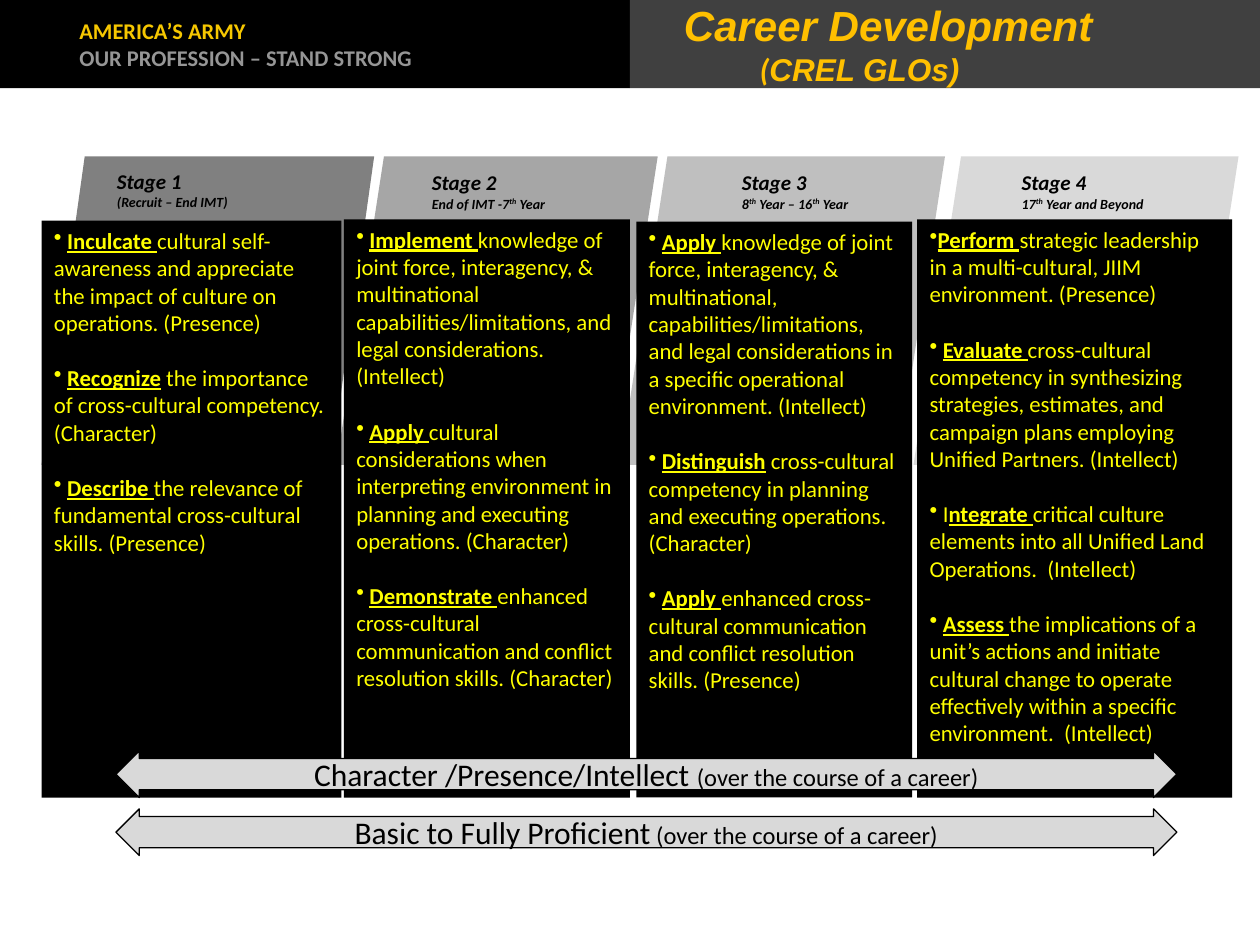
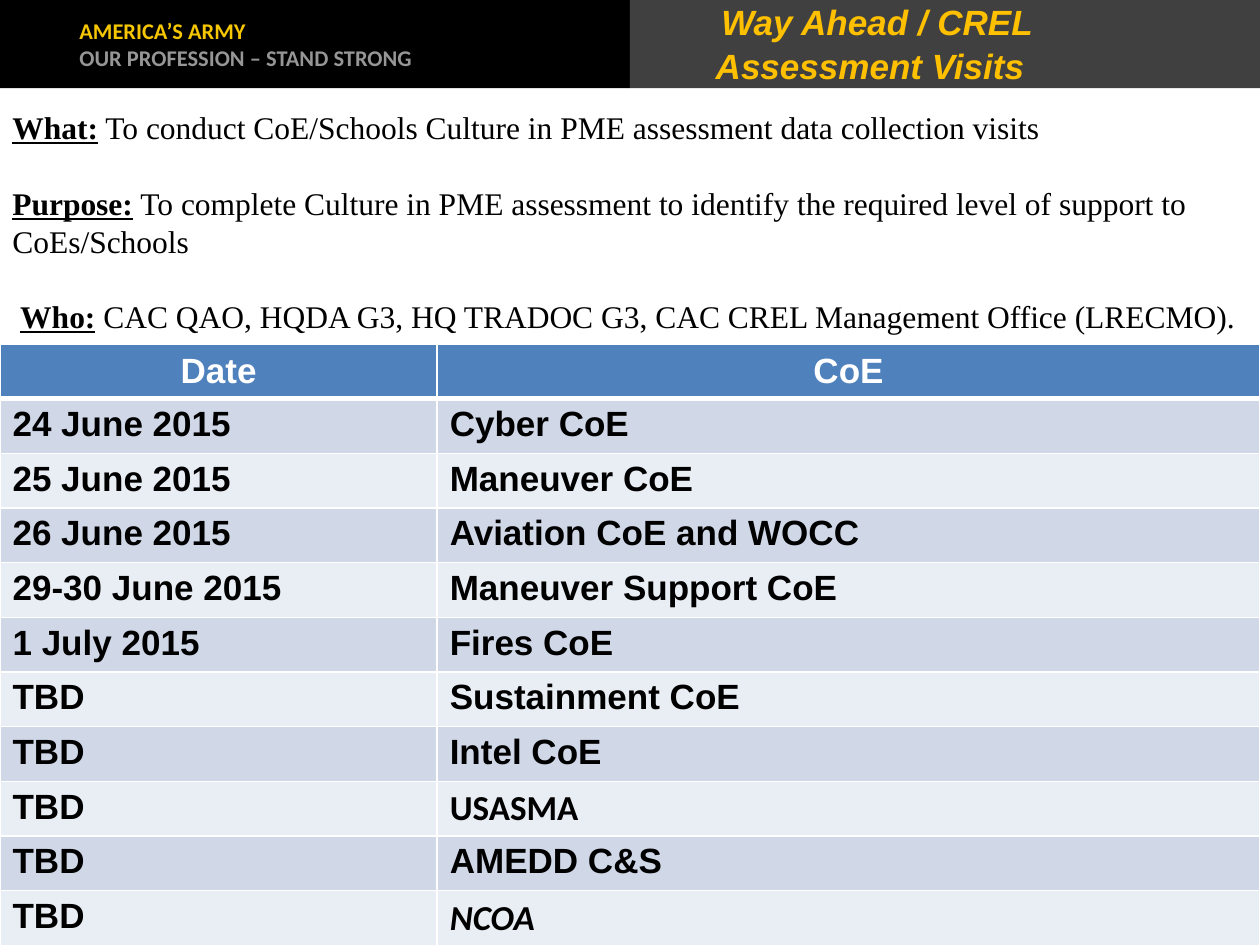
import pptx
import pptx.util
import pptx.dml.color
import pptx.enum.shapes
import pptx.enum.text
import pptx.oxml
import pptx.oxml.ns
from pptx.dml.color import RGBColor
from pptx.util import Inches

BLACK = RGBColor(0x00, 0x00, 0x00)
WHITE = RGBColor(0xFF, 0xFF, 0xFF)
CHARCOAL = RGBColor(0x40, 0x40, 0x40)
MOTTO_GOLD = RGBColor(0xF6, 0xC7, 0x00)
MOTTO_GRAY = RGBColor(0x96, 0x96, 0x96)
TITLE_GOLD = RGBColor(0xFF, 0xC0, 0x00)
YELLOW = RGBColor(0xFF, 0xFF, 0x00)
ARROW_GRAY = RGBColor(0xD9, 0xD9, 0xD9)
HEADER_BLUE = RGBColor(0x4F, 0x81, 0xBD)
ROW_FILLS = [RGBColor(0xD0, 0xD8, 0xE8), RGBColor(0xE9, 0xED, 0xF4)]

SHAPES = pptx.enum.shapes.MSO_SHAPE
ANCHOR = pptx.enum.text.MSO_ANCHOR
ALIGN = pptx.enum.text.PP_ALIGN
TITLE = dict(font="Arial", color=TITLE_GOLD, bold=True, italic=True)

STAGES = [
    dict(
        name="Stage 1", years=["(Recruit – End IMT)"], label=(0.83, 1.29),
        tab=(0.33, 2.64), slant=0.14, shade=RGBColor(0x80, 0x80, 0x80),
        panel=(0.33, 1.75, 2.38),
        goals=[
            (" ", "Inculcate ", "cultural self-awareness and appreciate the impact of culture on operations. (Presence)"),
            (" ", "Recognize", " the importance of cross-cultural competency. (Character)"),
            (" ", "Describe ", "the relevance of fundamental cross-cultural skills. (Presence)"),
        ],
    ),
    dict(
        name="Stage 2", years=["End of IMT -7", "th", " Year"], label=(3.33, 1.3),
        tab=(2.67, 2.55), slant=0.154, shade=RGBColor(0xA6, 0xA6, 0xA6),
        panel=(2.73, 1.74, 2.27),
        goals=[
            (" ", "Implement ", "knowledge of joint force, interagency, & multinational capabilities/limitations, and legal considerations. (Intellect)"),
            (" ", "Apply ", "cultural considerations when interpreting environment in planning and executing operations. (Character)"),
            (" ", "Demonstrate ", "enhanced cross-cultural communication and conflict resolution skills. (Character)"),
        ],
    ),
    dict(
        name="Stage 3", years=["8", "th", " Year – 16", "th", " Year"], label=(5.79, 1.3),
        tab=(4.92, 2.58), slant=0.154, shade=RGBColor(0xBF, 0xBF, 0xBF),
        panel=(5.05, 1.76, 2.19),
        goals=[
            (" ", "Apply ", "knowledge of joint force, interagency, & multinational, capabilities/limitations, and legal considerations in a specific operational environment. (Intellect)"),
            (" ", "Distinguish", " cross-cultural competency in planning and executing operations. (Character)"),
            (" ", "Apply ", "enhanced cross-cultural communication and conflict resolution skills. (Presence)"),
        ],
    ),
    dict(
        name="Stage 4", years=["17", "th", " Year and Beyond"], label=(8.01, 1.3),
        tab=(7.25, 2.58), slant=0.154, shade=RGBColor(0xD9, 0xD9, 0xD9),
        panel=(7.28, 1.74, 2.5),
        goals=[
            ("", "Perform ", "strategic leadership in a multi-cultural, JIIM environment. (Presence)"),
            (" ", "Evaluate ", "cross-cultural competency in synthesizing strategies, estimates, and campaign plans employing Unified Partners. (Intellect)"),
            (" I", "ntegrate ", "critical culture elements into all Unified Land Operations.  (Intellect)"),
            (" ", "Assess ", "the implications of a unit’s actions and initiate cultural change to operate effectively within a specific environment.  (Intellect)"),
        ],
    ),
]
PANEL_BOTTOM = 6.33

VISIT_NOTES = [
    ("", "What:", " To conduct CoE/Schools Culture in PME assessment data collection visits"),
    ("", "Purpose:", " To complete Culture in PME assessment to identify the required level of support to CoEs/Schools"),
    (" ", "Who:", " CAC QAO, HQDA G3, HQ TRADOC G3, CAC CREL Management Office (LRECMO)."),
]
VISITS = [
    ("Date", "CoE"),
    ("24 June 2015", "Cyber CoE"),
    ("25 June 2015", "Maneuver CoE"),
    ("26 June 2015", "Aviation CoE and WOCC"),
    ("29-30 June 2015", "Maneuver Support CoE"),
    ("1 July 2015", "Fires CoE"),
    ("TBD", "Sustainment CoE"),
    ("TBD", "Intel CoE"),
    ("TBD", "USASMA"),
    ("TBD", "AMEDD C&S"),
    ("TBD", "NCOA"),
]


def add_text(para, text, size=13, font="Calibri", color=BLACK, bold=False,
             italic=False, underline=False, superscript=False):
    span = para.add_run()
    span.text = text
    span.font.size = pptx.util.Pt(size)
    span.font.name = font
    span.font.color.rgb = color
    span.font.bold = bold
    span.font.italic = italic
    span.font.underline = underline
    if superscript:
        span._r.get_or_add_rPr().set("baseline", "30000")


def next_para(frame, gap=0, align=ALIGN.LEFT):
    para = frame.paragraphs[0]
    if para.runs:
        para = frame.add_paragraph()
        para.space_before = pptx.util.Pt(gap)
    para.alignment = align
    return para


def add_box(page, left, top, width, height, wrap=True):
    box = page.shapes.add_textbox(Inches(left), Inches(top), Inches(width), Inches(height))
    box.text_frame.word_wrap = wrap
    return box.text_frame


def add_block(page, kind, left, top, width, height, fill, line=None, adjust=()):
    block = page.shapes.add_shape(kind, Inches(left), Inches(top), Inches(width), Inches(height))
    block.shadow.inherit = False
    block.fill.solid()
    block.fill.fore_color.rgb = fill
    if line is None:
        block.line.fill.background()
    else:
        block.line.color.rgb = line
        block.line.width = pptx.util.Pt(0.75)
    for index, value in enumerate(adjust):
        block.adjustments[index] = value
    return block.text_frame


def add_banded_page(deck):
    page = deck.slides.add_slide(deck.slide_layouts[6])
    frame = add_block(page, SHAPES.RECTANGLE, 0, 0, 5, 0.7, BLACK)
    add_block(page, SHAPES.RECTANGLE, 5, 0, 5, 0.7, CHARCOAL)
    frame.margin_left = Inches(0.63)
    frame.vertical_anchor = ANCHOR.MIDDLE
    for text, color in [("AMERICA’S ARMY", MOTTO_GOLD), ("OUR PROFESSION – STAND STRONG", MOTTO_GRAY)]:
        add_text(next_para(frame), text, size=12.8, color=color, bold=True)
    return page


def add_key_phrase(para, lead, key, rest, **style):
    if lead:
        add_text(para, lead, **style)
    add_text(para, key, bold=True, underline=True, **style)
    add_text(para, rest, **style)


def add_bullet(para):
    properties = para._p.get_or_add_pPr()
    properties.set("marL", "0")
    properties.set("indent", "0")
    bullet = pptx.oxml.parse_xml(f'<a:buChar {pptx.oxml.ns.nsdecls("a")} char="•"/>')
    properties.append(bullet)


def add_stage_tab(page, stage):
    left, width = stage["tab"]
    add_block(page, SHAPES.PARALLELOGRAM, left, 1.24, width, 2.45, stage["shade"],
              adjust=[stage["slant"]])
    frame = add_box(page, *stage["label"], 1.53, 0.44, wrap=False)
    add_text(next_para(frame), stage["name"], size=12, bold=True, italic=True)
    para = next_para(frame)
    for text in stage["years"]:
        add_text(para, text, size=8, bold=True, italic=True, superscript=text == "th")


def add_goal_panel(page, stage):
    left, top, width = stage["panel"]
    frame = add_block(page, SHAPES.RECTANGLE, left, top, width, PANEL_BOTTOM - top, BLACK)
    frame.word_wrap = True
    frame.vertical_anchor = ANCHOR.TOP
    for goal in stage["goals"]:
        para = next_para(frame, gap=15.9)
        add_bullet(para)
        add_key_phrase(para, *goal, color=YELLOW)


def add_career_arrow(page, top, phrase, detail):
    frame = add_block(page, SHAPES.LEFT_RIGHT_ARROW, 0.92, top, 8.42, 0.37, ARROW_GRAY,
                      line=BLACK, adjust=[0.67, 0.5])
    frame.vertical_anchor = ANCHOR.MIDDLE
    para = next_para(frame, align=ALIGN.CENTER)
    add_text(para, phrase, size=18)
    add_text(para, detail, size=14)


def add_borders(cell, bottom):
    properties = cell._tc.get_or_add_tcPr()
    for side, points in [("L", 1), ("R", 1), ("T", 1), ("B", bottom)]:
        properties.append(pptx.oxml.parse_xml(
            f'<a:ln{side} {pptx.oxml.ns.nsdecls("a")} w="{points * 12700}"><a:solidFill>'
            f'<a:srgbClr val="{WHITE}"/></a:solidFill></a:ln{side}>'))


def add_visit_table(page):
    top = 2.73
    height = (7.5 - top) / len(VISITS)
    table = page.shapes.add_table(len(VISITS), 2, Inches(0), Inches(top),
                                  Inches(10), Inches(7.5 - top)).table
    for column, width in zip(table.columns, [3.47, 6.53]):
        column.width = Inches(width)
    for row, texts in enumerate(VISITS):
        table.rows[row].height = Inches(height)
        header = row == 0
        for column, text in enumerate(texts):
            cell = table.cell(row, column)
            add_borders(cell, bottom=3 if header else 1)
            cell.fill.solid()
            cell.fill.fore_color.rgb = HEADER_BLUE if header else ROW_FILLS[(row - 1) % 2]
            cell.vertical_anchor = ANCHOR.MIDDLE if header else ANCHOR.TOP
            para = next_para(cell.text_frame, align=ALIGN.CENTER if header else ALIGN.LEFT)
            add_text(para, text, size=20, bold=True, italic=text == "NCOA",
                     font="Calibri" if text in ("USASMA", "NCOA") else "Arial",
                     color=WHITE if header else BLACK)


def build_career_page(deck):
    page = add_banded_page(deck)
    for stage in STAGES:
        add_stage_tab(page, stage)
    for stage in STAGES:
        add_goal_panel(page, stage)
    add_career_arrow(page, 6.42, "Basic to Fully Proficient", " (over the course of a career)")
    add_career_arrow(page, 5.96, "Character /Presence/Intellect ", "(over the course of a career)")
    frame = add_box(page, 5.33, -0.05, 4.67, 0.81)
    add_text(next_para(frame), "Career Development", size=24, **TITLE)
    para = next_para(frame)
    para._p.get_or_add_pPr().set("marL", str(Inches(0.6)))
    add_text(para, "(", size=18, **{**TITLE, "font": "Calibri"})
    add_text(para, "CREL GLOs)", size=18, **TITLE)


def build_visits_page(deck):
    page = add_banded_page(deck)
    add_visit_table(page)
    para = next_para(add_box(page, 4.9, -0.16, 4.01, 0.91), align=ALIGN.CENTER)
    add_text(para, " ", size=28, **TITLE)
    add_text(para, "Way Ahead / CREL Assessment Visits", size=20, **TITLE)
    frame = add_box(page, 0, 0.81, 10, 1.92)
    for note in VISIT_NOTES:
        para = next_para(frame, gap=21.6)
        para.line_spacing = pptx.util.Pt(21.6)
        add_key_phrase(para, *note, size=18, font="Times New Roman")


def main():
    deck = pptx.Presentation()
    deck.slide_width = Inches(10)
    deck.slide_height = Inches(7.5)
    build_career_page(deck)
    build_visits_page(deck)
    deck.save("out.pptx")


if __name__ == "__main__":
    main()
